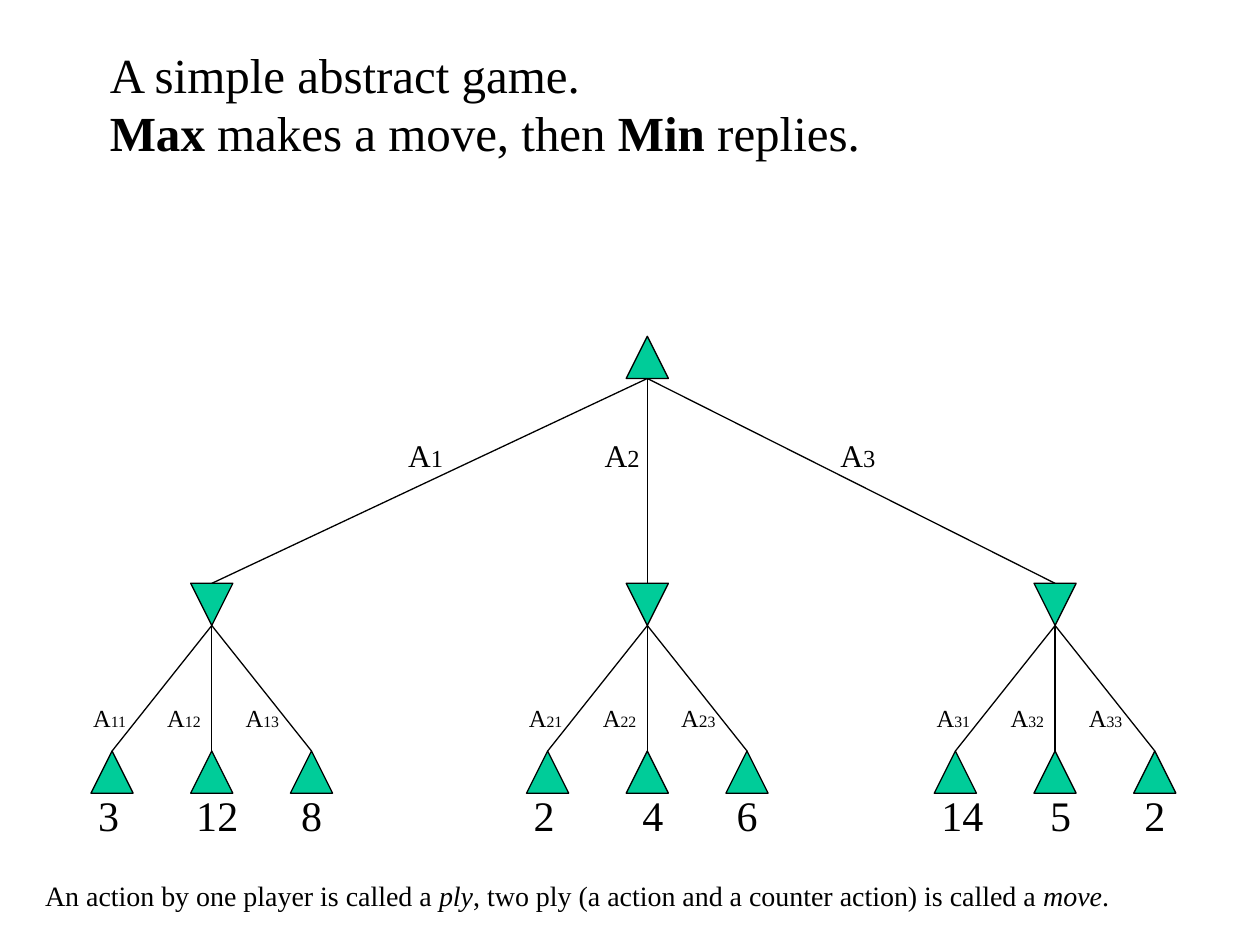
import pptx
import pptx.dml.color
import pptx.enum.shapes
import pptx.enum.text
import pptx.oxml
import pptx.oxml.ns
import pptx.util
from pptx.util import Cm

FONT = "Times New Roman"
BLACK = "000000"
GREEN = "00CC99"
NODE = 0.85
ROOT_TOP = 6.78
MIN_TOP = 11.76
LEAF_TOP = 15.14
LEAF_GAP = 2.01
CENTERS = [4.27, 13.05, 21.27]
VALUES = [["3", "12", "8"], ["2", "4", "6"], ["14", "5", "2"]]
MOVE_LEFTS = [7.98, 11.94, 16.69]
REPLY_WIDTH = 1.4
REPLY_OFFSETS = [-2.64, -1.26, 0.43]
VALUE_OFFSETS = [-2.54, 0.11, 1.55]


def color(value):
    return pptx.dml.color.RGBColor.from_string(value)


def add_span(para, text, size, bold=False, italic=False):
    span = para.add_run()
    span.text = text
    span.font.name = FONT
    span.font.size = pptx.util.Pt(size)
    span.font.bold = bold
    span.font.italic = italic
    span.font.color.rgb = color(BLACK)


def add_text(shapes, left, top, width, height, spans, centered=False, wrap=False):
    box = shapes.add_textbox(Cm(left), Cm(top), Cm(width), Cm(height))
    frame = box.text_frame
    frame.word_wrap = wrap
    frame.auto_size = pptx.enum.text.MSO_AUTO_SIZE.SHAPE_TO_FIT_TEXT
    para = frame.paragraphs[0]
    if centered:
        para.alignment = pptx.enum.text.PP_ALIGN.CENTER
    for span in spans:
        add_span(para, *span)


def add_node(shapes, center, top, flipped=False):
    node = shapes.add_shape(
        pptx.enum.shapes.MSO_SHAPE.ISOSCELES_TRIANGLE,
        Cm(center - NODE / 2), Cm(top), Cm(NODE), Cm(NODE))
    node.shadow.inherit = False
    node.fill.solid()
    node.fill.fore_color.rgb = color(GREEN)
    node.line.color.rgb = color(BLACK)
    node.line.width = pptx.util.Pt(0.75)
    if flipped:
        node._element.spPr.xfrm.set("flipV", "1")


def add_branch(shapes, start_x, start_y, end_x, end_y):
    branch = shapes.add_connector(
        pptx.enum.shapes.MSO_CONNECTOR.STRAIGHT,
        Cm(start_x), Cm(start_y), Cm(end_x), Cm(end_y))
    branch.line.color.rgb = color(BLACK)
    branch.line.width = pptx.util.Pt(0.75)
    branch._element.spPr.append(
        pptx.oxml.parse_xml(f"<a:effectLst {pptx.oxml.ns.nsdecls('a')}/>"))


def add_title(page):
    title = page.shapes.title
    title.left, title.top, title.width, title.height = Cm(1.96), Cm(0.76), Cm(16.03), Cm(2.64)
    frame = title.text_frame
    frame.word_wrap = False
    frame.auto_size = pptx.enum.text.MSO_AUTO_SIZE.NONE
    frame.vertical_anchor = pptx.enum.text.MSO_ANCHOR.TOP
    lines = [
        [("A simple abstract game.", 28)],
        [("Max", 28, True), (" makes a move, then ", 28),
         ("Min", 28, True), (" replies.", 28)],
    ]
    for index, spans in enumerate(lines):
        para = frame.add_paragraph() if index else frame.paragraphs[0]
        para.alignment = pptx.enum.text.PP_ALIGN.LEFT
        para.space_before = pptx.util.Pt(0)
        para.line_spacing = 1.0
        for span in spans:
            add_span(para, *span)


def reply_spans(move, reply):
    if (move, reply) == (2, 3):
        return [("A", 14), ("2", 10), ("3", 9)]
    return [("A", 14), (f"{move}{reply}", 9)]


def add_subtree(page, move, center, values):
    shapes = page.shapes.add_group_shape().shapes
    leaves = [center + step * LEAF_GAP for step in (-1, 0, 1)]
    for leaf in leaves:
        add_node(shapes, leaf, LEAF_TOP)
    add_node(shapes, center, MIN_TOP, flipped=True)
    for leaf in leaves:
        add_branch(shapes, center, MIN_TOP + NODE, leaf, LEAF_TOP)
    for index, value in enumerate(values):
        middle = index == 1
        width = 0.94 if len(value) == 1 else 1.35
        left = center + VALUE_OFFSETS[index] - (width / 2 if middle else 0)
        add_text(shapes, left, 15.8, width, 1.27, [(value, 24)], middle)
    for index, offset in enumerate(REPLY_OFFSETS):
        add_text(shapes, center + offset, 14.05, REPLY_WIDTH, 0.84,
                 reply_spans(move, index + 1), index == 1)


def main():
    deck = pptx.Presentation()
    deck.slide_width, deck.slide_height = Cm(25.4), Cm(19.05)
    page = deck.slides.add_slide(deck.slide_layouts[5])
    add_title(page)
    root = CENTERS[1]
    for move, (center, values) in enumerate(zip(CENTERS, VALUES), 1):
        add_subtree(page, move, center, values)
    for move, (center, left) in enumerate(zip(CENTERS, MOVE_LEFTS), 1):
        add_branch(page.shapes, root, ROOT_TOP + NODE, center, MIN_TOP)
        add_text(page.shapes, left, 8.66, 1.22, 1.02, [("A", 18), (str(move), 14)])
    add_text(page.shapes, 0.66, 17.58, 22.76, 0.94, [
        ("An action by one player is called a ", 16),
        ("ply", 16, False, True),
        (", two ply (a action and a counter action) is called a ", 16),
        ("move", 16, False, True),
        (".", 16),
    ], wrap=True)
    add_node(page.shapes, root, ROOT_TOP)
    deck.save("out.pptx")


if __name__ == "__main__":
    main()
